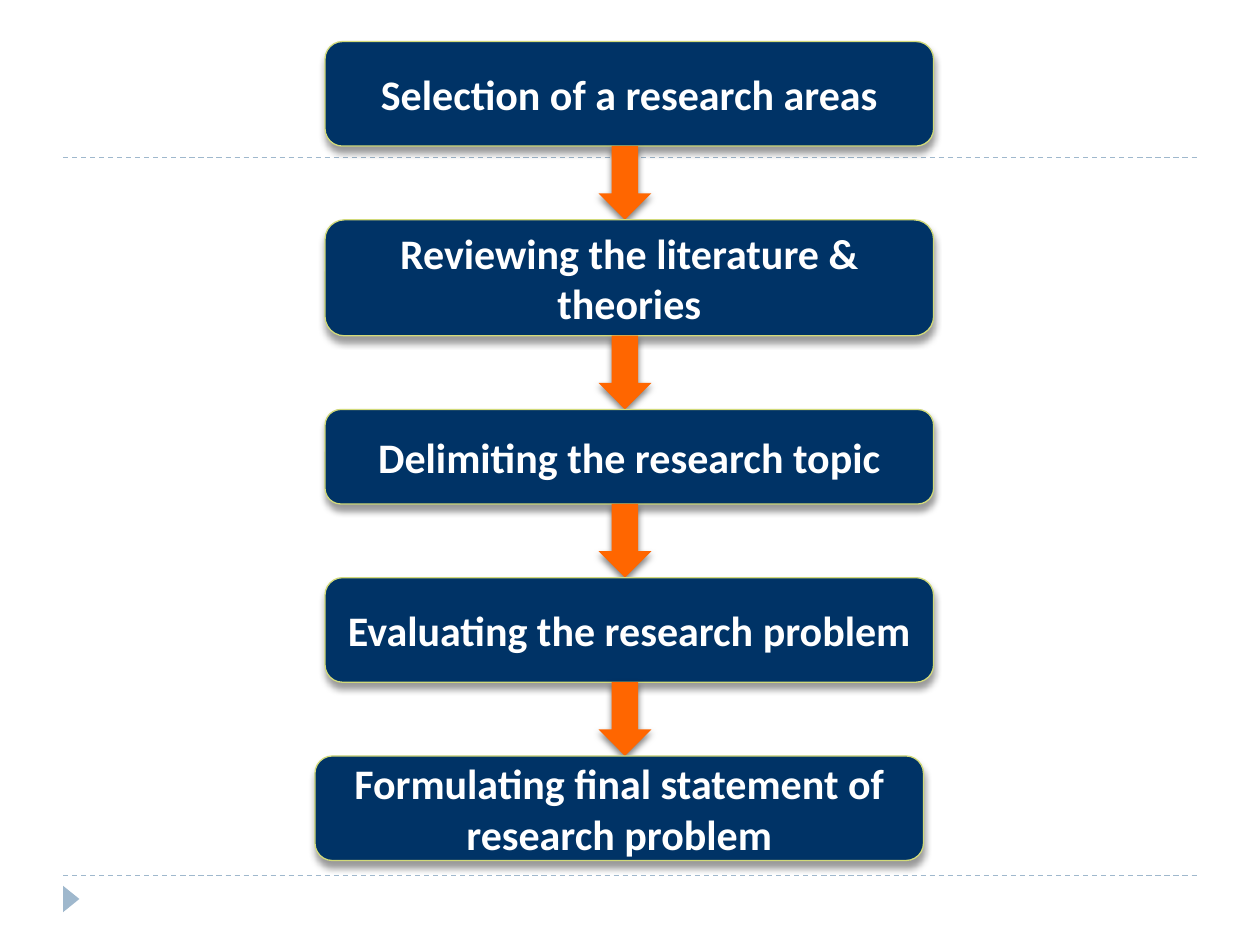
"""Build a slide showing the five steps towards a research problem."""
from dataclasses import dataclass

from lxml.etree import SubElement
from pptx import Presentation
from pptx.dml.color import RGBColor as Color
from pptx.enum.dml import MSO_LINE as Dash
from pptx.enum.shapes import MSO_CONNECTOR as Link, MSO_SHAPE as Shape
from pptx.enum.text import MSO_ANCHOR as Anchor, PP_ALIGN as Align
from pptx.oxml.ns import qn
from pptx.util import Inches, Pt


@dataclass(frozen=True)
class Theme:
    navy: Color = Color.from_string("003366")
    lime: Color = Color.from_string("D2DA7A")
    orange: Color = Color.from_string("FF6600")
    mist: Color = Color.from_string("9FB8CD")
    white: Color = Color.from_string("FFFFFF")
    font: str = "Calibri"
    size: int = 24
    rule: float = 0.75


theme = Theme()


def write(shape, text, size=theme.size, color=theme.white, bold=True):
    frame = shape.text_frame
    frame.word_wrap = True
    frame.vertical_anchor = Anchor.MIDDLE
    para = frame.paragraphs[0]
    para.alignment = Align.CENTER
    run = para.add_run()
    run.text = text
    run.font.name = theme.font
    run.font.size = Pt(size)
    run.font.bold = bold
    run.font.color.rgb = color


def draw(kind, box, fill, line=None, alpha=0, drop=0):
    shape = slide.shapes.add_shape(kind, *map(Inches, box))
    shape.fill.solid()
    shape.fill.fore_color.rgb = fill
    if line is None:
        shape.line.fill.background()
    else:
        shape.line.color.rgb = line
        shape.line.width = Pt(theme.rule)
    shape.shadow.inherit = False
    if alpha:
        effects = shape._element.spPr.find(qn("a:effectLst"))
        shade = SubElement(effects, qn("a:outerShdw"), blurRad=str(Pt(4)),
                           dist=str(Pt(drop)), dir="5400000", rotWithShape="0")
        tint = SubElement(shade, qn("a:srgbClr"), val="000000")
        SubElement(tint, qn("a:alpha"), val=str(alpha * 1000))
    return shape


deck = Presentation()
deck.slide_width, deck.slide_height = Inches(10), Inches(7.5)
slide = deck.slides.add_slide(deck.slide_layouts[6])

for y in (6.95, 1.25):
    rule = slide.shapes.add_connector(
        Link.STRAIGHT, Inches(0.5), Inches(y), Inches(9.5), Inches(y))
    rule.line.color.rgb = theme.mist
    rule.line.width = Pt(theme.rule)
    rule.line.dash_style = Dash.DASH
    SubElement(rule._element.spPr, qn("a:effectLst"))

mark = draw(Shape.ISOSCELES_TRIANGLE, (0.46, 7.07, 0.21, 0.13), theme.mist)
mark.rotation = 90

steps = [
    ("Selection of a research areas", 2.58, 0.83),
    ("Reviewing the literature & theories", 2.58, 0.92),
    ("Delimiting the research topic", 2.58, 0.75),
    ("Evaluating the research problem", 2.58, 0.83),
    ("Formulating final statement of research problem", 2.5, 0.83),
]
gap = 0.585
top = 0.33
for index, (text, left, height) in enumerate(steps):
    if index:
        draw(Shape.DOWN_ARROW, (4.75, top - gap, 0.42, gap), theme.orange,
             alpha=50, drop=2)
    step = draw(Shape.ROUNDED_RECTANGLE, (left, top, 4.83, height), theme.navy,
                line=theme.lime, alpha=40, drop=3.4)
    write(step, text)
    top += height + gap

deck.save("out.pptx")
